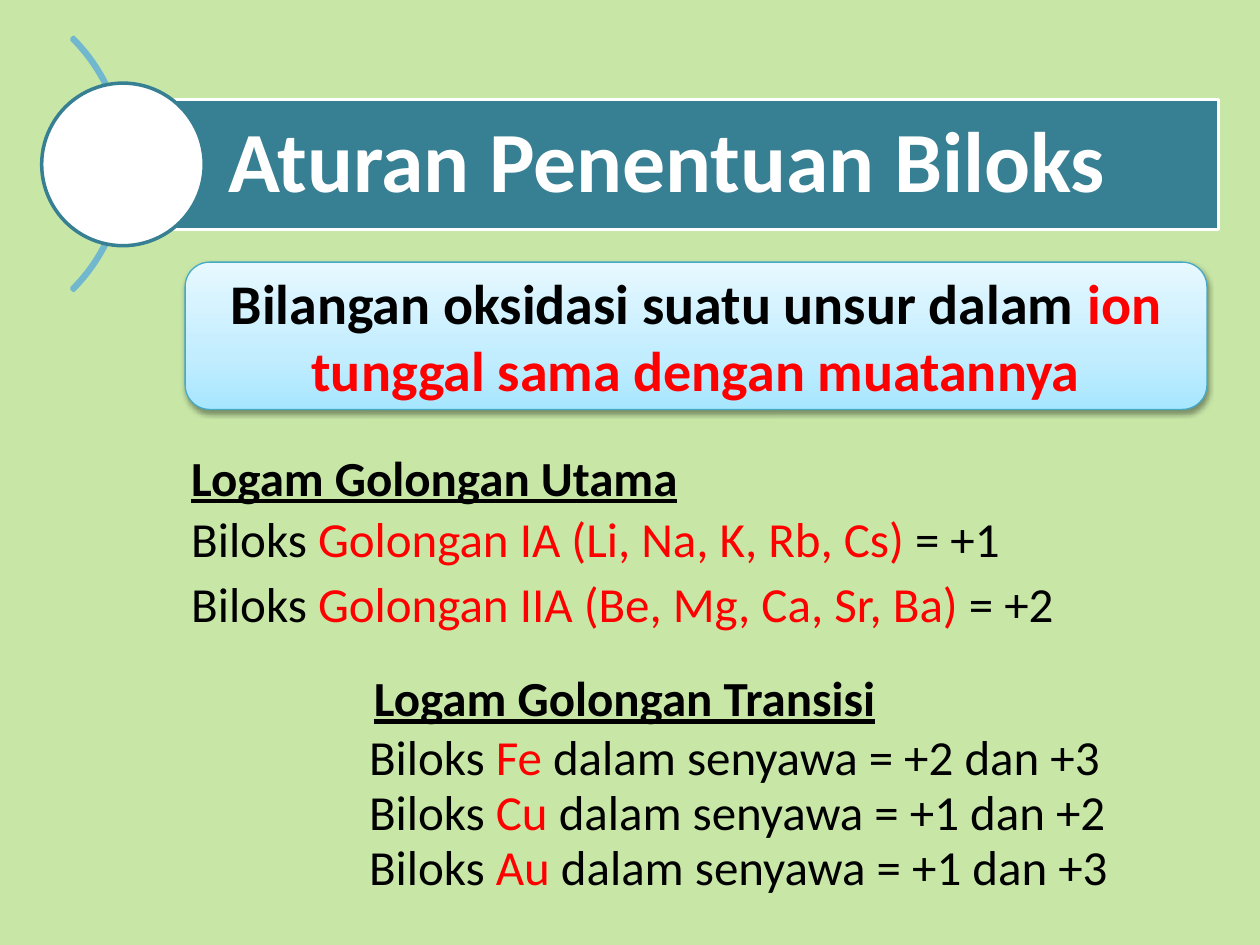
import lxml.etree
import pptx
import pptx.dml.color
import pptx.enum.shapes
import pptx.enum.text
import pptx.oxml.ns
import pptx.util

Pt = pptx.util.Pt
RGB = pptx.dml.color.RGBColor
SHAPE = pptx.enum.shapes.MSO_SHAPE
ANCHOR = pptx.enum.text.MSO_ANCHOR
ALIGN = pptx.enum.text.PP_ALIGN
qn = pptx.oxml.ns.qn

BACKGROUND = RGB(0xC8, 0xE7, 0xA7)
BLACK = RGB(0, 0, 0)
WHITE = RGB(255, 255, 255)
RED = RGB(255, 0, 0)
TEAL = RGB(0x37, 0x7F, 0x92)
ARC_BLUE = RGB(0x71, 0xB7, 0xCD)
RULE_LINE = RGB(0x46, 0xAA, 0xC5)
SHADOW = BLACK
RULE_STOPS = [
    (0, RGB(0xA7, 0xE6, 0xFF)),
    (35, RGB(0xC1, 0xED, 0xFF)),
    (100, RGB(0xE7, 0xF8, 0xFF)),
]

LINE_HEIGHT = 41.2
MAIN_LEFT = 102.2
TRANSITION_LEFT = 203.8
MAIN_METALS = [
    (287.3, 482.4, "Golongan IA (Li, Na, K, Rb, Cs) ", "= +1"),
    (324, 513.4, "Golongan IIA (Be, Mg, Ca, Sr, Ba) ", "= +2"),
]
TRANSITION_METALS = [
    (411.8, 437, "Fe ", "+2 dan +3"),
    (443.2, 440.6, "Cu ", "+1 dan +2"),
    (474.6, 441.4, "Au ", "+1 dan +3"),
]


def write_text(tf, runs, size=28, bold=False, underline=False,
               align=ALIGN.LEFT, spacing=None):
    p = tf.paragraphs[0]
    p.alignment = align
    if spacing:
        p.line_spacing = spacing
    for text, color in runs:
        r = p.add_run()
        r.text = text
        r.font.name = "Calibri"
        r.font.size = Pt(size)
        r.font.bold = bold
        r.font.underline = underline
        r.font.color.rgb = color


def add_label(s, left, top, width, runs, **fmt):
    sp = s.shapes.add_textbox(Pt(left), Pt(top), Pt(width), Pt(LINE_HEIGHT))
    sp.text_frame.word_wrap = False
    write_text(sp.text_frame, runs, **fmt)


def add_shape(s, kind, left, top, width, height, line, weight, fill=None):
    sp = s.shapes.add_shape(kind, Pt(left), Pt(top), Pt(width), Pt(height))
    sp.shadow.inherit = False
    sp.line.color.rgb = line
    sp.line.width = Pt(weight)
    if fill is not None:
        sp.fill.solid()
        sp.fill.fore_color.rgb = fill
    return sp


def add_color(parent, color):
    return lxml.etree.SubElement(parent, qn("a:srgbClr"), val=str(color))


def set_gradient(sp, stops, angle):
    sp.fill.gradient()
    sp.fill.gradient_angle = angle
    stop_list = sp.fill._xPr.find(".//" + qn("a:gsLst"))
    for old in list(stop_list):
        stop_list.remove(old)
    for percent, color in stops:
        stop = lxml.etree.SubElement(stop_list, qn("a:gs"), pos=str(percent * 1000))
        add_color(stop, color)


def set_shadow(sp, color, alpha, blur, distance):
    effects = sp._element.spPr.find(qn("a:effectLst"))
    shadow = lxml.etree.SubElement(
        effects, qn("a:outerShdw"), blurRad=str(Pt(blur)), dist=str(Pt(distance)),
        dir="5400000", rotWithShape="0")
    lxml.etree.SubElement(add_color(shadow, color), qn("a:alpha"), val=str(alpha * 1000))


def add_rule(s):
    sp = add_shape(s, SHAPE.ROUNDED_RECTANGLE, 105.8, 149.8, 583.9, 84.2,
                   RULE_LINE, 0.75)
    set_gradient(sp, RULE_STOPS, 90)
    set_shadow(sp, SHADOW, 38, 3.1, 1.6)
    tf = sp.text_frame
    tf.word_wrap = True
    tf.vertical_anchor = ANCHOR.MIDDLE
    write_text(tf, [("Bilangan oksidasi suatu unsur dalam ", BLACK),
                    ("ion tunggal sama dengan muatannya", RED)],
               size=32, bold=True, align=ALIGN.CENTER)


def add_title(s):
    arc = add_shape(s, SHAPE.BLOCK_ARC, -132.5, -8.6, 204.5, 204.5, ARC_BLUE, 2)
    arc.fill.background()
    for i, value in enumerate((189, 27, 0.008)):
        arc.adjustments[i] = value

    bar = add_shape(s, SHAPE.RECTANGLE, 70.6, 56.9, 625.7, 74.2, WHITE, 2, TEAL)
    tf = bar.text_frame
    tf.word_wrap = True
    tf.vertical_anchor = ANCHOR.MIDDLE
    tf.margin_left = Pt(59.8)
    tf.margin_top = tf.margin_right = tf.margin_bottom = Pt(10)
    write_text(tf, [("Aturan Penentuan Biloks", WHITE)],
               size=49, bold=True, spacing=0.9)

    add_shape(s, SHAPE.OVAL, 23.8, 47.5, 92.9, 92.9, TEAL, 2, WHITE)


def main():
    prs = pptx.Presentation()
    prs.slide_width, prs.slide_height = Pt(720), Pt(540)
    s = prs.slides.add_slide(prs.slide_layouts[6])
    s.background.fill.solid()
    s.background.fill.fore_color.rgb = BACKGROUND

    add_rule(s)
    add_title(s)

    add_label(s, MAIN_LEFT, 252, 296, [("Logam Golongan Utama", BLACK)],
              bold=True, underline=True)
    for top, width, group, value in MAIN_METALS:
        add_label(s, MAIN_LEFT, top, width,
                  [("Biloks ", BLACK), (group, RED), (value, BLACK)])

    add_label(s, 206.6, 378, 304.6, [("Logam Golongan Transisi", BLACK)],
              bold=True, underline=True)
    for top, width, metal, values in TRANSITION_METALS:
        add_label(s, TRANSITION_LEFT, top, width,
                  [("Biloks ", BLACK), (metal, RED),
                   ("dalam senyawa = " + values, BLACK)])

    prs.save("out.pptx")


if __name__ == "__main__":
    main()
